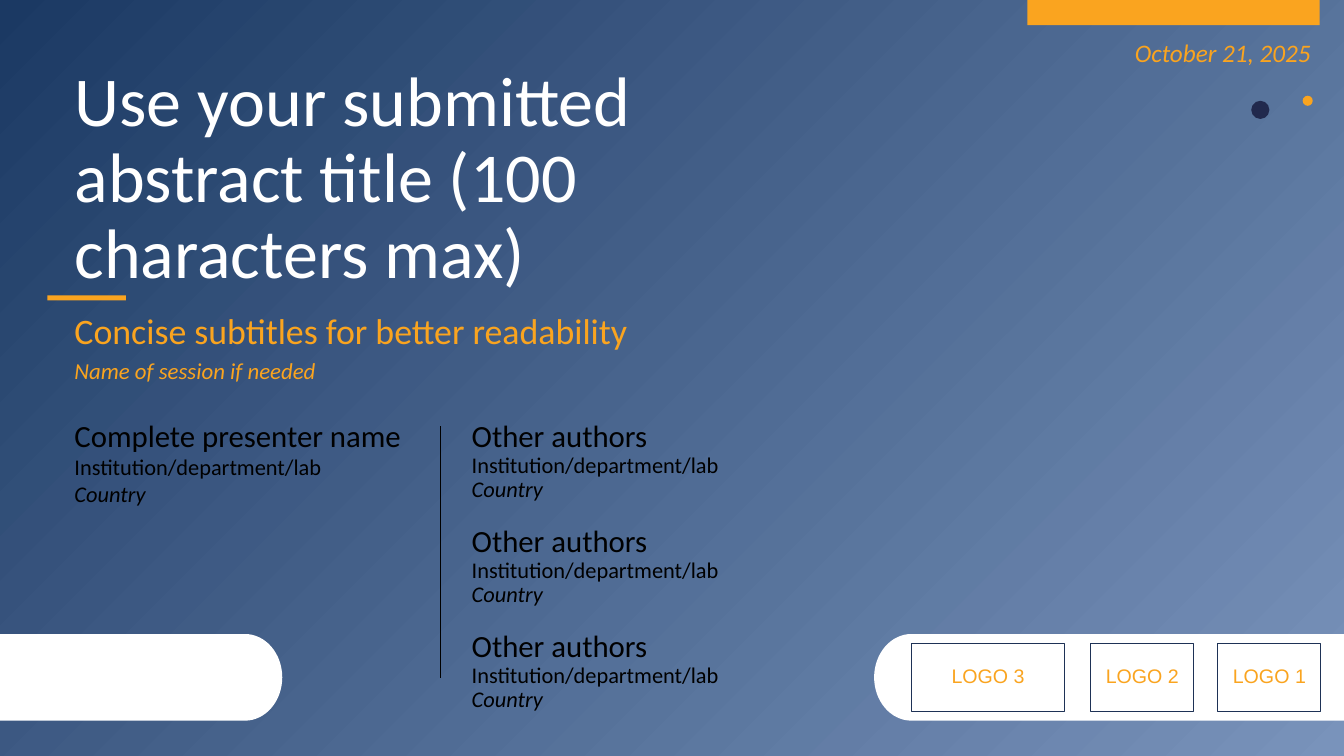
from math import cos, pi, sin

from lxml import etree
from pptx import Presentation
from pptx.dml.color import RGBColor
from pptx.enum.shapes import MSO_CONNECTOR, MSO_SHAPE
from pptx.enum.text import MSO_ANCHOR, MSO_AUTO_SIZE, PP_ALIGN
from pptx.oxml.ns import qn
from pptx.util import Inches, Pt

RECT, OVAL = MSO_SHAPE.RECTANGLE, MSO_SHAPE.OVAL
LINE = MSO_CONNECTOR.STRAIGHT
LEFT, MID, RIGHT = PP_ALIGN.LEFT, PP_ALIGN.CENTER, PP_ALIGN.RIGHT
TOP, CENTRE = MSO_ANCHOR.TOP, MSO_ANCHOR.MIDDLE
FIXED = MSO_AUTO_SIZE.NONE

GOLD, NAVY, INK = "FAA41F", "21294D", "1E3256"
WHITE, BLACK = "FFFFFF", "000000"
DARK, LIGHT = "1B3963", "7993BB"


def paint(color, code):
    color.rgb = RGBColor.from_string(code)


def write(frame, text, size, color, font="Calibri", slant=False,
          align=LEFT, space=1.0, before=0, first=False):
    para = frame.paragraphs[0] if first else frame.add_paragraph()
    para.alignment = align
    para.line_spacing = space
    para.space_before = Pt(before)
    run = para.add_run()
    run.text = text
    run.font.name = font
    run.font.size = Pt(size)
    run.font.italic = slant
    paint(run.font.color, color)


def setup(frame, anchor=TOP):
    frame.word_wrap = True
    frame.auto_size = FIXED
    frame.vertical_anchor = anchor
    return frame


def box(slide, x, y, w, h):
    area = slide.shapes.add_textbox(Inches(x), Inches(y), Inches(w), Inches(h))
    return setup(area.text_frame)


def style(shape, fill=None, edge=None):
    shape.shadow.inherit = False
    if fill:
        shape.fill.solid()
        paint(shape.fill.fore_color, fill)
    else:
        shape.fill.background()
    if edge:
        paint(shape.line.color, edge)
        shape.line.width = Pt(0.75)
    else:
        shape.line.fill.background()


def block(slide, kind, x, y, w, h, fill=None, edge=None):
    shape = slide.shapes.add_shape(
        kind, Inches(x), Inches(y), Inches(w), Inches(h))
    style(shape, fill, edge)
    return shape


def tab(slide, flat, bend, bulge):
    top, half, steps = 6.29, 0.43, 32
    arc = [(bend + bulge * sin(pi * i / steps),
            top + half - half * cos(pi * i / steps))
           for i in range(steps + 1)]
    points = [(Inches(x), Inches(y))
              for x, y in arc + [(flat, top + 2 * half)]]
    path = slide.shapes.build_freeform(Inches(flat), Inches(top))
    path.add_line_segments(points, close=True)
    style(path.convert_to_shape(), WHITE)


def rule(slide, x, top, end):
    line = slide.shapes.add_connector(
        LINE, Inches(x), Inches(top), Inches(x), Inches(end))
    paint(line.line.color, BLACK)
    line.line.width = Pt(1)
    etree.SubElement(line._element.spPr, qn("a:effectLst"))


def logo(slide, name, x, w):
    frame = block(slide, RECT, x, 6.38, w, 0.68, edge=INK).text_frame
    setup(frame, CENTRE)
    write(frame, name, 14, GOLD, font="Arial", align=MID, space=0.9, first=True)


def person(frame, name, first=True, space=1.0, before=0):
    write(frame, name, 22, BLACK, first=first, space=space, before=before)
    write(frame, "Institution/department/lab", 16, BLACK, space=space)
    write(frame, "Country", 16, BLACK, slant=True, space=space)


def backdrop(slide):
    fill = slide.background.fill
    fill.gradient()
    fill.gradient_angle = 315
    for stop, code in zip(fill.gradient_stops, (DARK, LIGHT)):
        paint(stop.color, code)


def heading(slide):
    title = slide.shapes.title
    title.left, title.top = Inches(0.64), Inches(0.61)
    title.width, title.height = Inches(7.94), Inches(2.52)
    write(setup(title.text_frame),
          "Use your submitted abstract title (100 characters max)",
          50, WHITE, space=0.9, first=True)
    frame = box(slide, 0.64, 3.13, 9.28, 0.75)
    write(frame, "Concise subtitles for better readability", 25.6, GOLD,
          space=0.7, before=10, first=True)
    write(frame, "Name of session if needed", 16.3, GOLD, slant=True,
          space=0.7, before=10)


def main():
    deck = Presentation()
    deck.slide_width, deck.slide_height = Inches(13.33), Inches(7.5)
    slide = deck.slides.add_slide(deck.slide_layouts[5])
    backdrop(slide)

    tab(slide, 0, 2.43, 0.37)
    tab(slide, 13.33, 9.04, -0.37)
    block(slide, RECT, 0.47, 2.93, 0.78, 0.05, GOLD)
    heading(slide)

    for name, x, w in (("LOGO 1", 12.08, 1.02), ("LOGO 2", 10.82, 1.02),
                       ("LOGO 3", 9.04, 1.52)):
        logo(slide, name, x, w)

    block(slide, RECT, 10.19, 0, 2.9, 0.25, GOLD)
    write(box(slide, 10.72, 0.32, 2.38, 0.4), "October 21, 2025", 18, GOLD,
          slant=True, align=RIGHT, first=True)
    block(slide, OVAL, 12.41, 1, 0.18, 0.18, NAVY)
    block(slide, OVAL, 12.92, 0.95, 0.1, 0.1, GOLD)

    person(box(slide, 0.64, 4.08, 3.62, 1.52), "Complete presenter name")
    rule(slide, 4.37, 4.23, 6.73)
    others = box(slide, 4.58, 4.13, 3.62, 3.14)
    for i in range(3):
        person(others, "Other authors", first=i == 0, space=0.9,
               before=16.5 if i else 0)

    deck.save("out.pptx")


if __name__ == "__main__":
    main()
